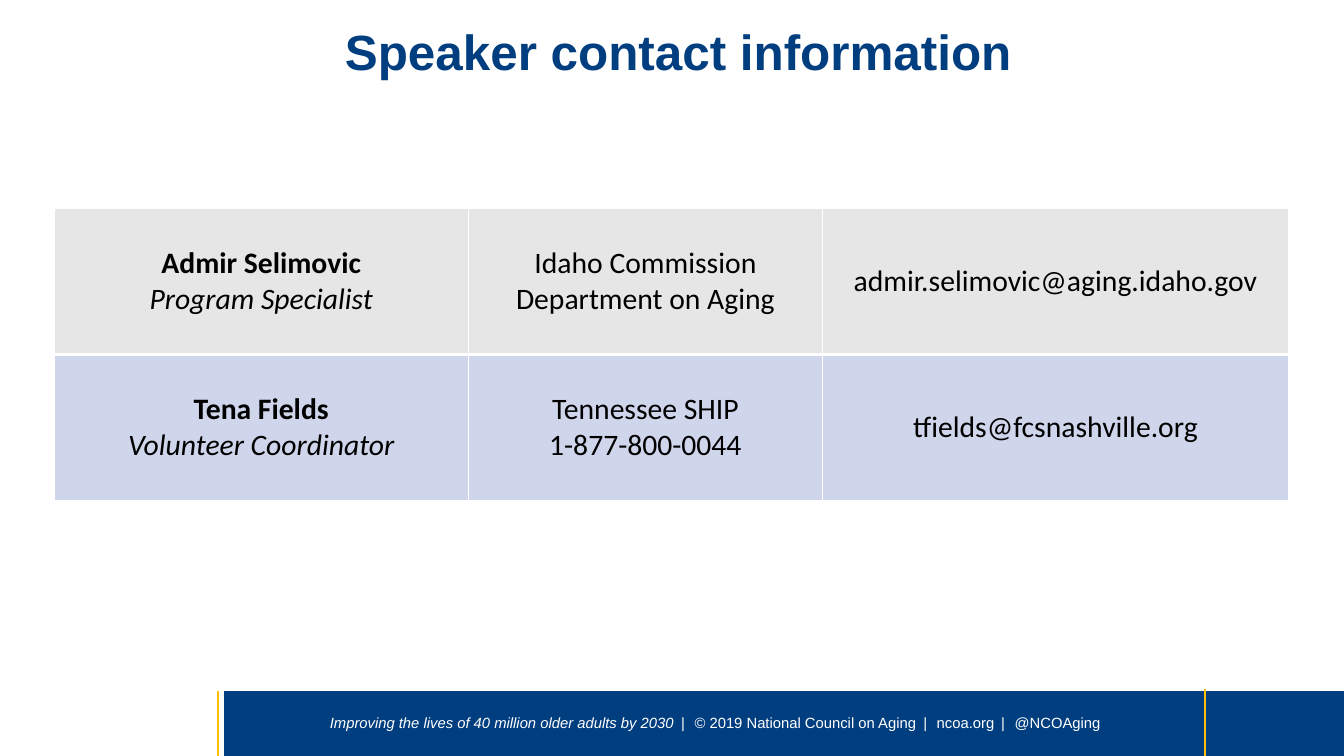
"""Build the speaker contact slide with its table and footer band."""
import pptx
import pptx.dml.color
import pptx.enum.shapes
import pptx.enum.text
import pptx.oxml
import pptx.oxml.ns
import pptx.util

Pt = pptx.util.Pt
CENTER = pptx.enum.text.PP_ALIGN.CENTER
MIDDLE = pptx.enum.text.MSO_ANCHOR.MIDDLE
WIDTH, HEIGHT = 1088, 612
BAND_TOP = 559.5

COLORS = {
    "navy": "003E7F",
    "gold": "FFC000",
    "white": "FFFFFF",
    "black": "000000",
    "gray": "E7E6E6",
    "periwinkle": "CFD5EA",
}
TITLE_FONT = {"name": "Arial", "size": Pt(40), "bold": True}
FOOTER_FONT = {"name": "Arial", "size": Pt(12)}
CELL_FONT = {"name": "Calibri", "size": Pt(24), "bold": False, "italic": False}
NAME_FONT = CELL_FONT | {"bold": True}
ROLE_FONT = CELL_FONT | {"italic": True}

COLUMN_WIDTHS = [335, 287, 377]
ROW_HEIGHT = 118.25
CONTACTS = [
    ("gray", [
        [("Admir Selimovic", NAME_FONT), ("Program Specialist", ROLE_FONT)],
        [("Idaho Commission Department on Aging", CELL_FONT)],
        [("admir.selimovic@aging.idaho.gov", CELL_FONT)],
    ]),
    ("periwinkle", [
        [("Tena Fields", NAME_FONT), ("Volunteer Coordinator", ROLE_FONT)],
        [("Tennessee SHIP", CELL_FONT), ("1-877-800-0044", CELL_FONT)],
        [("tfields@fcsnashville.org", CELL_FONT)],
    ]),
]
MOTTO = "Improving the lives of 40 million older adults by 2030"
FOOTER_ITEMS = ["© 2019 National Council on Aging", "ncoa.org", "@NCOAging"]


def rgb(color):
    return pptx.dml.color.RGBColor.from_string(COLORS[color])


def add_span(para, text, color, formats):
    span = para.add_run()
    span.text = text
    for key, value in formats.items():
        setattr(span.font, key, value)
    span.font.color.rgb = rgb(color)
    return span


def set_title(page, text):
    title = page.shapes.title
    title.left, title.top, title.width, title.height = map(Pt, (109.5, 11, 879, 66))
    frame = title.text_frame
    frame.auto_size = pptx.enum.text.MSO_AUTO_SIZE.NONE
    frame.vertical_anchor = MIDDLE
    para = frame.paragraphs[0]
    para.alignment = CENTER
    para.line_spacing = 0.9
    add_span(para, text, "navy", TITLE_FONT)


def add_band(page, left):
    band = page.shapes.add_shape(
        pptx.enum.shapes.MSO_SHAPE.RECTANGLE,
        Pt(left), Pt(BAND_TOP), Pt(WIDTH - left), Pt(HEIGHT - BAND_TOP))
    band.shadow.inherit = False
    band.fill.solid()
    band.fill.fore_color.rgb = rgb("navy")
    band.line.color.rgb = rgb("navy")
    band.line.width = Pt(1)


def add_rule(page, x, top):
    rule = page.shapes.add_connector(
        pptx.enum.shapes.MSO_CONNECTOR.STRAIGHT, Pt(x), Pt(top), Pt(x), Pt(HEIGHT))
    rule.line.color.rgb = rgb("gold")
    rule.line.width = Pt(2)
    properties = rule._element.spPr
    properties.append(pptx.oxml.parse_xml(
        f'<a:effectLst {pptx.oxml.ns.nsdecls("a")}/>'))


def add_footer_text(page):
    box = page.shapes.add_textbox(
        Pt(244), Pt(BAND_TOP), Pt(670), Pt(HEIGHT - BAND_TOP))
    frame = box.text_frame
    frame.word_wrap = True
    frame.vertical_anchor = MIDDLE
    para = frame.paragraphs[0]
    para.alignment = CENTER
    para.line_spacing = 0.9
    add_span(para, MOTTO, "white", FOOTER_FONT | {"italic": True})
    for item in FOOTER_ITEMS:
        divider = add_span(para, " | ", "white", FOOTER_FONT)
        divider.font._element.set("spc", "220")
        add_span(para, item, "white", FOOTER_FONT)


def set_borders(cell, top, bottom):
    properties = cell._tc.get_or_add_tcPr()
    for side, width in {"L": 1, "R": 1, "T": top, "B": bottom}.items():
        properties.append(pptx.oxml.parse_xml(
            f'<a:ln{side} {pptx.oxml.ns.nsdecls("a")} w="{Pt(width)}"><a:solidFill>'
            f'<a:srgbClr val="{COLORS["white"]}"/></a:solidFill></a:ln{side}>'))


def fill_cell(cell, lines, color):
    cell.vertical_anchor = MIDDLE
    cell.fill.solid()
    cell.fill.fore_color.rgb = rgb(color)
    frame = cell.text_frame
    for index, (text, formats) in enumerate(lines):
        para = frame.add_paragraph() if index else frame.paragraphs[0]
        para.alignment = CENTER
        add_span(para, text, "black", formats)


def add_contacts(page):
    table = page.shapes.add_table(
        len(CONTACTS), len(COLUMN_WIDTHS), Pt(44), Pt(168.5),
        Pt(sum(COLUMN_WIDTHS)), Pt(ROW_HEIGHT * len(CONTACTS))).table
    table.first_row = table.horz_banding = False
    for column, width in zip(table.columns, COLUMN_WIDTHS):
        column.width = Pt(width)
    for index, (row, (color, entries)) in enumerate(zip(table.rows, CONTACTS)):
        row.height = Pt(ROW_HEIGHT)
        top = 3 if index else 1
        bottom = 3 if index < len(CONTACTS) - 1 else 1
        for cell, lines in zip(row.cells, entries):
            set_borders(cell, top, bottom)
            fill_cell(cell, lines, color)


def main():
    deck = pptx.Presentation()
    deck.slide_width, deck.slide_height = Pt(WIDTH), Pt(HEIGHT)
    page = deck.slides.add_slide(deck.slide_layouts.get_by_name("Title Only"))
    add_band(page, 181.5)
    add_rule(page, 975.5, 558)
    add_rule(page, 176.5, BAND_TOP)
    add_footer_text(page)
    set_title(page, "Speaker contact information")
    add_contacts(page)
    deck.save("out.pptx")


if __name__ == "__main__":
    main()
